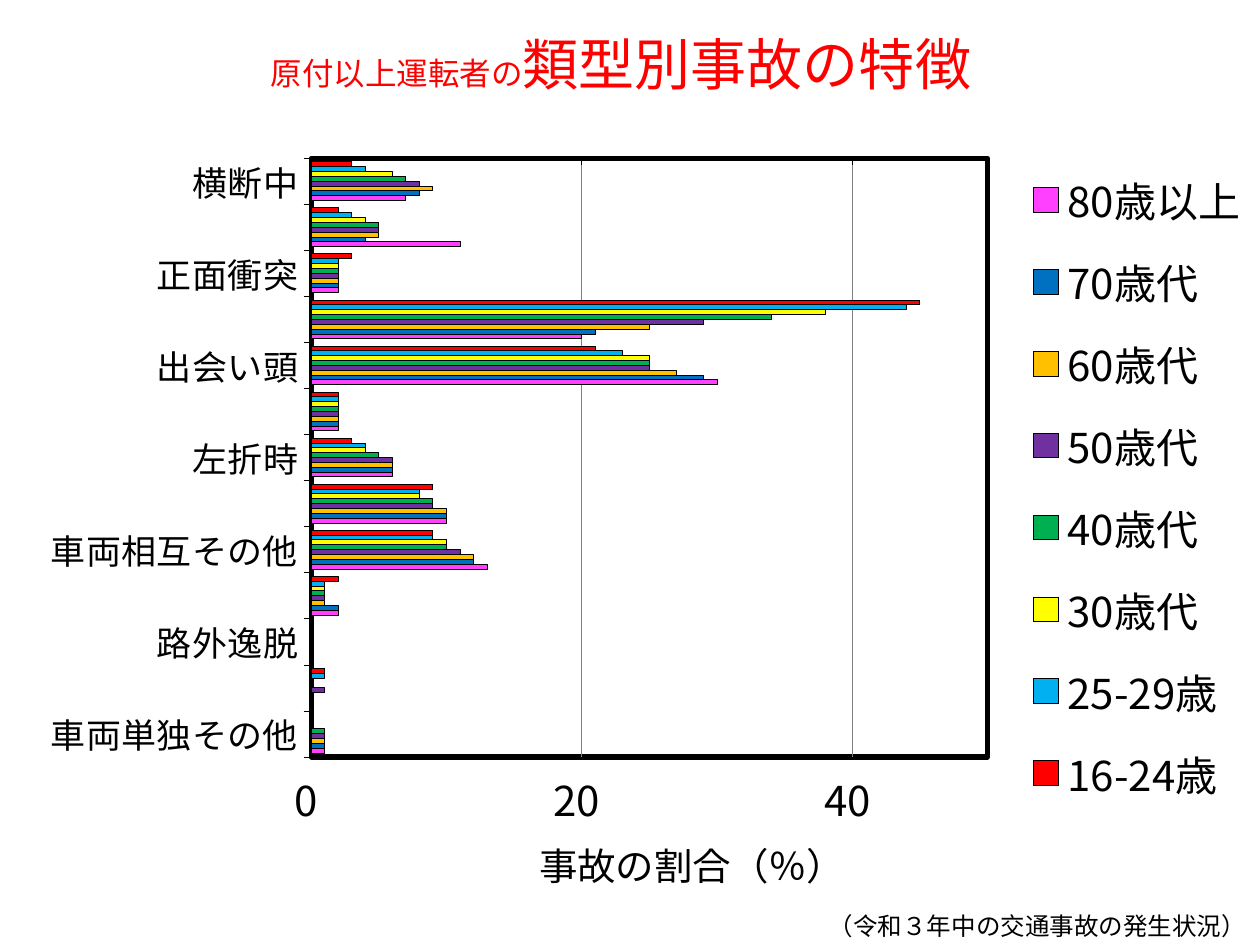
from lxml.etree import SubElement
from pptx import Presentation
from pptx.chart.data import CategoryChartData
from pptx.dml.color import RGBColor
from pptx.enum.chart import (
    XL_CHART_TYPE as ChartType,
    XL_LEGEND_POSITION as LegendPosition,
    XL_TICK_LABEL_POSITION as LabelPosition,
    XL_TICK_MARK as TickMark,
)
from pptx.enum.text import MSO_ANCHOR as Anchor, PP_ALIGN as Align
from pptx.oxml import parse_xml
from pptx.oxml.ns import nsdecls, qn
from pptx.util import Pt

TITLE = [("原付以上運転者の", "title_small"), ("類型別事故の特徴", "title_large")]
AXIS_TITLE = "事故の割合（％）"
FOOTNOTE = "（令和３年中の交通事故の発生状況）"
CATEGORIES = [
    "横断中", "対人その他", "正面衝突", "追突", "出会い頭", "追越時等", "左折時",
    "右折時", "車両相互その他", "工作物衝突", "路外逸脱", "転倒", "車両単独その他",
]
AGE_GROUPS = [
    ("16-24歳", "FF0000", (3, 2, 3, 45, 21, 2, 3, 9, 9, 2, 0, 1, 0)),
    ("25-29歳", "00B0F0", (4, 3, 2, 44, 23, 2, 4, 8, 9, 1, 0, 1, 0)),
    ("30歳代", "FFFF00", (6, 4, 2, 38, 25, 2, 4, 8, 10, 1, 0, 0, 0)),
    ("40歳代", "00B050", (7, 5, 2, 34, 25, 2, 5, 9, 10, 1, 0, 0, 1)),
    ("50歳代", "7030A0", (8, 5, 2, 29, 25, 2, 6, 9, 11, 1, 0, 1, 1)),
    ("60歳代", "FFC000", (9, 5, 2, 25, 27, 2, 6, 10, 12, 1, 0, 0, 1)),
    ("70歳代", "0070C0", (8, 4, 2, 21, 29, 2, 6, 10, 12, 2, 0, 0, 1)),
    ("80歳以上", "FF40FF", (7, 11, 2, 20, 30, 2, 6, 10, 13, 2, 0, 0, 1)),
]

THEME = {
    "font": "Noto Sans CJK JP",
    "text": "000000",
    "title": "FF0000",
    "grid": "808080",
    "sizes": {
        "title_small": 18, "title_large": 32, "category": 20, "value": 24,
        "axis_title": 22, "legend": 24, "footnote": 14, "chart": 11,
    },
}
BOXES = {
    "title": (15.84, 0.72, 678.24, 70.56),
    "chart": (15.84, 71.28, 704.16, 444.24),
    "footnote": (466.56, 516.96, 254.88, 24.48),
}
LAYOUTS = {
    "plot": {"x": 0.23, "y": 0.044, "w": 0.549, "h": 0.786},
    "legend": {"x": 0.8, "y": 0.03, "w": 0.2, "h": 0.89},
    "axis_title": {"x": 0.41, "y": 0.92},
}


def apply_format(target, values):
    for name, value in values.items():
        setattr(target, name, value)


def style_font(font, size, color=THEME["text"]):
    apply_format(font, {"name": THEME["font"], "size": Pt(THEME["sizes"][size]), "bold": False})
    font.color.rgb = RGBColor.from_string(color)


def add_run(paragraph, text, size, color):
    run = paragraph.add_run()
    run.text = text
    style_font(run.font, size, color)
    properties = run.font._element
    SubElement(properties, qn("a:ea")).set("typeface", THEME["font"])


def style_line(line, color, width):
    line.color.rgb = RGBColor.from_string(color)
    line.width = Pt(width)


def place_part(element, index, layout, inner=False):
    for old_layout in element.findall(qn("c:layout")):
        element.remove(old_layout)
    target = '<c:layoutTarget val="inner"/>' if inner else ""
    modes = "".join(f'<c:{key}Mode val="edge"/>' for key in "xy")
    lengths = "".join(f'<c:{key} val="{value}"/>' for key, value in layout.items())
    element.insert(index, parse_xml(
        f'<c:layout {nsdecls("c")}><c:manualLayout>{target}{modes}{lengths}'
        "</c:manualLayout></c:layout>"
    ))


def add_title(slide):
    title = slide.shapes.title
    apply_format(title, dict(zip(("left", "top", "width", "height"), map(Pt, BOXES["title"]))))
    title.text_frame.vertical_anchor = Anchor.MIDDLE
    paragraph = title.text_frame.paragraphs[0]
    paragraph.alignment = Align.CENTER
    for text, size in TITLE:
        add_run(paragraph, text, size, THEME["title"])


def style_axes(chart):
    category_axis, value_axis = chart.category_axis, chart.value_axis
    apply_format(category_axis, {"reverse_order": True, "major_tick_mark": TickMark.OUTSIDE})
    apply_format(value_axis, {
        "minimum_scale": 0, "maximum_scale": 50, "major_unit": 20,
        "major_tick_mark": TickMark.INSIDE, "has_major_gridlines": True,
        "tick_label_position": LabelPosition.HIGH,
    })
    apply_format(value_axis.tick_labels, {"number_format": "0_ ", "number_format_is_linked": False})
    for axis, size in ((category_axis, "category"), (value_axis, "value")):
        style_font(axis.tick_labels.font, size)
        style_line(axis.format.line, THEME["text"], 0.25)
    style_line(value_axis.major_gridlines.format.line, THEME["grid"], 0.5)
    paragraph = value_axis.axis_title.text_frame.paragraphs[0]
    add_run(paragraph, AXIS_TITLE, "axis_title", THEME["text"])
    place_part(value_axis.axis_title._element, 1, LAYOUTS["axis_title"])


def add_chart(slide):
    data = CategoryChartData(number_format="0")
    data.categories = CATEGORIES
    for name, _, values in AGE_GROUPS:
        data.add_series(name, values)
    chart = slide.shapes.add_chart(
        ChartType.BAR_CLUSTERED, *map(Pt, BOXES["chart"]), data
    ).chart
    apply_format(chart, {"has_title": False, "has_legend": True})
    style_font(chart.font, "chart")
    plot = chart.plots[0]
    apply_format(plot, {"gap_width": 150, "overlap": 0, "vary_by_categories": False})
    for series, (_, color, _) in zip(plot.series, AGE_GROUPS):
        series.format.fill.solid()
        series.format.fill.fore_color.rgb = RGBColor.from_string(color)
        style_line(series.format.line, THEME["text"], 0.5)
    style_axes(chart)
    apply_format(chart.legend, {"position": LegendPosition.TOP, "include_in_layout": False})
    style_font(chart.legend.font, "legend")
    place_part(chart.legend._element, 1, LAYOUTS["legend"])
    plot_area = chart._chartSpace.chart.plotArea
    place_part(plot_area, 0, LAYOUTS["plot"], inner=True)
    plot_area.append(parse_xml(
        f'<c:spPr {nsdecls("c", "a")}><a:noFill/><a:ln w="{Pt(3)}"><a:solidFill>'
        f'<a:srgbClr val="{THEME["text"]}"/></a:solidFill></a:ln></c:spPr>'
    ))


def add_footnote(slide):
    footnote = slide.shapes.add_textbox(*map(Pt, BOXES["footnote"]))
    footnote.text_frame.word_wrap = False
    add_run(footnote.text_frame.paragraphs[0], FOOTNOTE, "footnote", THEME["text"])


def main():
    presentation = Presentation()
    apply_format(presentation, {"slide_width": Pt(720), "slide_height": Pt(540)})
    slide = presentation.slides.add_slide(presentation.slide_layouts[5])
    add_title(slide)
    add_chart(slide)
    add_footnote(slide)
    presentation.save("out.pptx")


if __name__ == "__main__":
    main()
